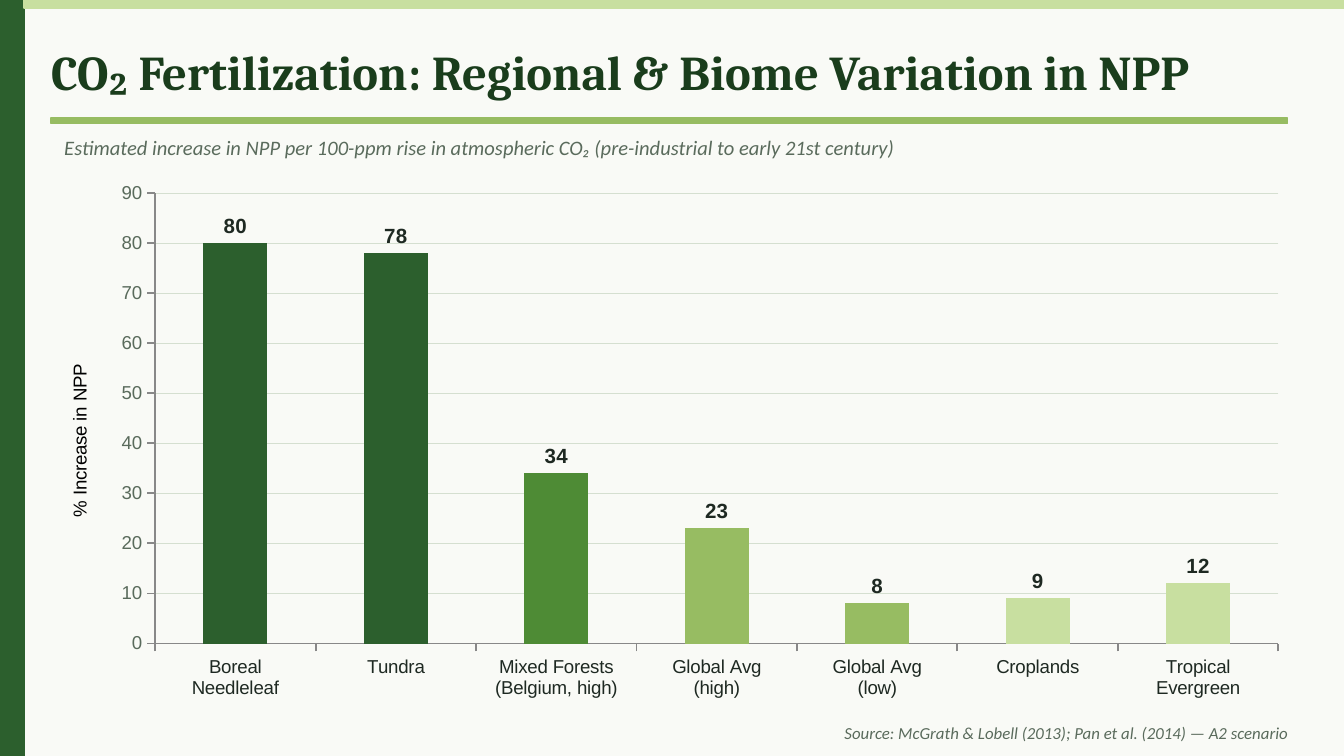
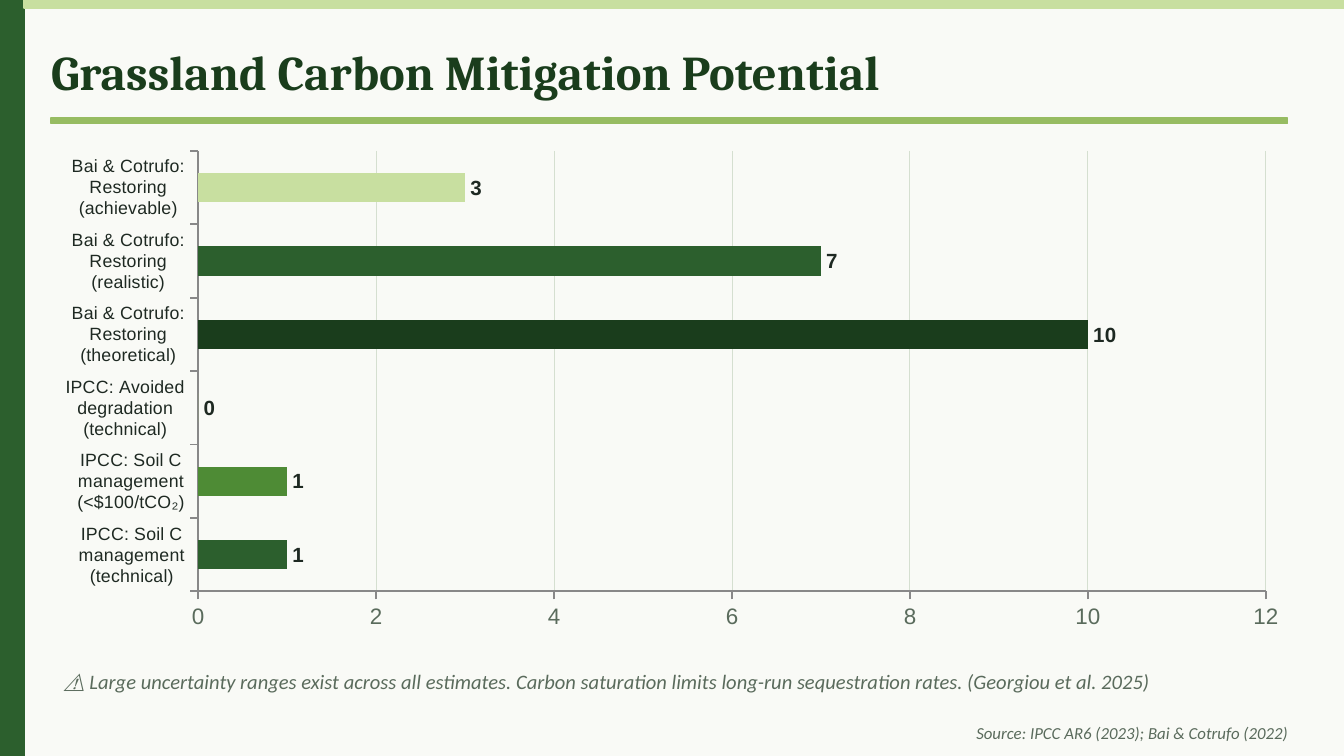
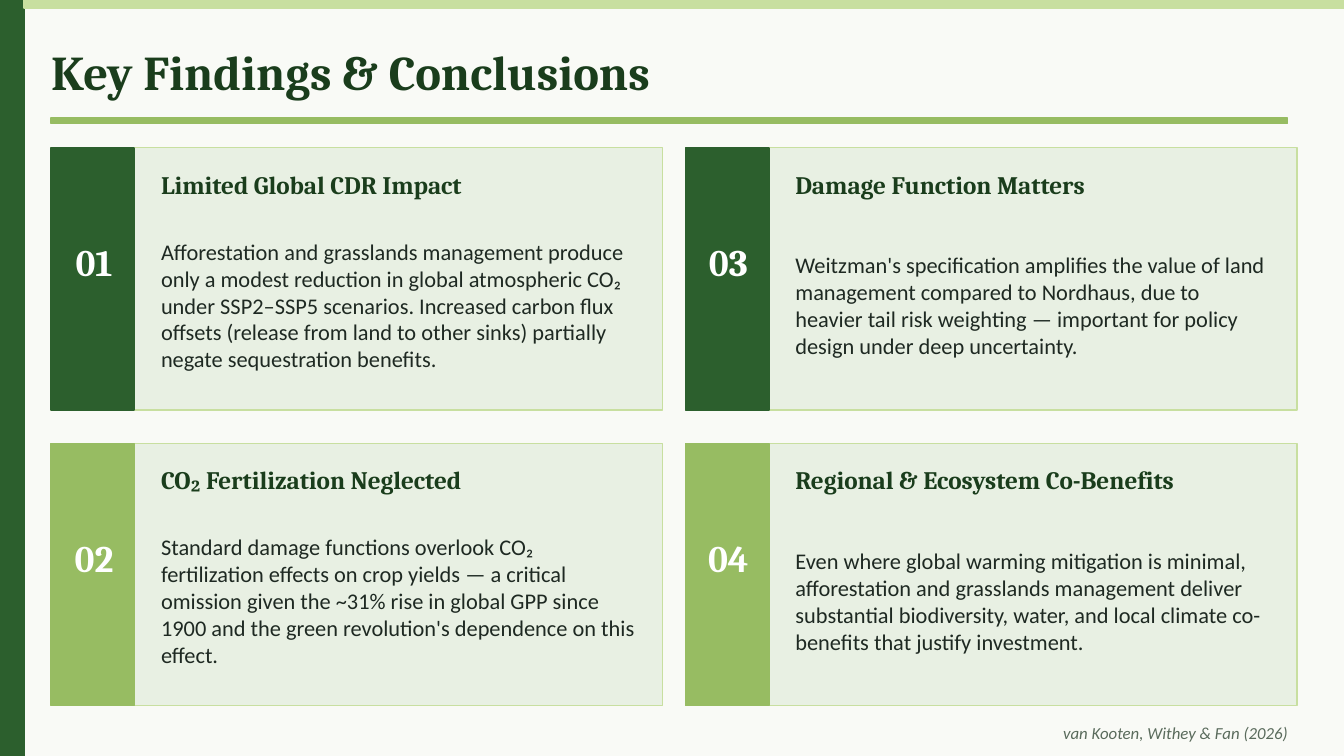
"""Build three slides on carbon sequestration findings: two bar charts and a grid of conclusions."""
from dataclasses import dataclass
from typing import Optional

from lxml import etree
from pptx import Presentation
from pptx import util as u
from pptx.chart.axis import CategoryAxis, ValueAxis
from pptx.chart.data import CategoryChartData
from pptx.dml.color import RGBColor
from pptx.enum import chart as charts, shapes, text
from pptx.oxml import parse_xml
from pptx.slide import Slide
from pptx.text.text import Font, TextFrame

FOREST = RGBColor(0x2C, 0x5F, 0x2D)
DEEP_GREEN = RGBColor(0x1A, 0x3D, 0x1C)
LEAF = RGBColor(0x4E, 0x8B, 0x35)
MOSS = RGBColor(0x97, 0xBC, 0x62)
PALE_GREEN = RGBColor(0xC8, 0xDF, 0xA0)
CARD_FILL = RGBColor(0xE8, 0xF0, 0xE3)
PAPER = RGBColor(0xF9, 0xFA, 0xF6)
INK = RGBColor(0x1E, 0x29, 0x22)
MUTED = RGBColor(0x5A, 0x6B, 0x5C)
AXIS_GREY = RGBColor(0x88, 0x88, 0x88)
GRID_GREEN = RGBColor(0xD5, 0xDF, 0xD0)
WHITE = RGBColor(0xFF, 0xFF, 0xFF)
BLACK = RGBColor(0x00, 0x00, 0x00)

SLIDE_WIDTH = u.Inches(10)
CELL = SLIDE_WIDTH / 100
COLUMNS, ROWS = 100, 56.25
LEFT_MARGIN, CONTENT_COLUMNS = 3.8, 92
SIDE_BAND, TOP_BAND = 1.8, 0.6

HEADING_FONT, BODY_FONT, CHART_FONT = "Cambria", "Calibri", "Arial"
DRAWING_NS = "http://schemas.openxmlformats.org/drawingml/2006/main"
CHART_NS = "http://schemas.openxmlformats.org/drawingml/2006/chart"


@dataclass(frozen=True)
class Area:
    """A rectangle measured in grid columns and rows."""
    column: float
    row: float
    columns: float
    rows: float

    def lengths(self) -> tuple[int, int, int, int]:
        """Return left, top, width and height as slide lengths."""
        return tuple(round(cells * CELL) for cells in (self.column, self.row, self.columns, self.rows))


@dataclass(frozen=True)
class TextStyle:
    """The look of one kind of text."""
    font: str
    size: float
    color: RGBColor
    bold: bool = False
    italic: bool = False
    align: text.PP_ALIGN = text.PP_ALIGN.LEFT


@dataclass(frozen=True)
class Bar:
    """One category of a bar chart."""
    label: str
    value: int
    color: RGBColor


@dataclass(frozen=True)
class BarChart:
    """The settings of one bar chart."""
    kind: charts.XL_CHART_TYPE
    area: Area
    bars: tuple[Bar, ...]
    maximum: int
    step: int
    category_size: float
    value_size: float
    value_title: Optional[str] = None


@dataclass(frozen=True)
class Finding:
    """One numbered conclusion."""
    heading: str
    body: str


TITLE = TextStyle(HEADING_FONT, 26, DEEP_GREEN, bold=True)
NOTE = TextStyle(BODY_FONT, 11, MUTED, italic=True)
SOURCE = TextStyle(BODY_FONT, 9, MUTED, italic=True, align=text.PP_ALIGN.RIGHT)
CARD_NUMBER = TextStyle(HEADING_FONT, 20, WHITE, bold=True, align=text.PP_ALIGN.CENTER)
CARD_HEADING = TextStyle(HEADING_FONT, 13.5, DEEP_GREEN, bold=True)
CARD_BODY = TextStyle(BODY_FONT, 12, INK)
BAR_LABEL = TextStyle(CHART_FONT, 11, INK, bold=True)
AXIS_TITLE = TextStyle(CHART_FONT, 10, BLACK)

NPP_CHART = BarChart(
    charts.XL_CHART_TYPE.COLUMN_CLUSTERED,
    Area(3, 12.8, 94, 40),
    (
        Bar("Boreal\nNeedleleaf", 80, FOREST),
        Bar("Tundra", 78, FOREST),
        Bar("Mixed Forests\n(Belgium, high)", 34, LEAF),
        Bar("Global Avg\n(high)", 23, MOSS),
        Bar("Global Avg\n(low)", 8, MOSS),
        Bar("Croplands", 9, PALE_GREEN),
        Bar("Tropical\nEvergreen", 12, PALE_GREEN),
    ),
    maximum=90, step=10, category_size=10, value_size=10, value_title="% Increase in NPP",
)

MITIGATION_CHART = BarChart(
    charts.XL_CHART_TYPE.BAR_CLUSTERED,
    Area(3, 10.5, 94, 37),
    (
        Bar("IPCC: Soil C\nmanagement\n(technical)", 1, FOREST),
        Bar("IPCC: Soil C\nmanagement\n(<$100/tCO₂)", 1, LEAF),
        Bar("IPCC: Avoided\ndegradation\n(technical)", 0, MOSS),
        Bar("Bai & Cotrufo:\nRestoring\n(theoretical)", 10, DEEP_GREEN),
        Bar("Bai & Cotrufo:\nRestoring\n(realistic)", 7, FOREST),
        Bar("Bai & Cotrufo:\nRestoring\n(achievable)", 3, PALE_GREEN),
    ),
    maximum=12, step=2, category_size=9.5, value_size=12,
)

FINDINGS = (
    Finding(
        "Limited Global CDR Impact",
        "Afforestation and grasslands management produce only a modest reduction in global "
        "atmospheric CO₂ under SSP2–SSP5 scenarios. Increased carbon flux offsets (release from "
        "land to other sinks) partially negate sequestration benefits.",
    ),
    Finding(
        "CO₂ Fertilization Neglected",
        "Standard damage functions overlook CO₂ fertilization effects on crop yields — a critical "
        "omission given the ~31% rise in global GPP since 1900 and the green revolution's "
        "dependence on this effect.",
    ),
    Finding(
        "Damage Function Matters",
        "Weitzman's specification amplifies the value of land management compared to Nordhaus, due "
        "to heavier tail risk weighting — important for policy design under deep uncertainty.",
    ),
    Finding(
        "Regional & Ecosystem Co-Benefits",
        "Even where global warming mitigation is minimal, afforestation and grasslands management "
        "deliver substantial biodiversity, water, and local climate co-benefits that justify "
        "investment.",
    ),
)


def style_font(font: Font, style: TextStyle) -> None:
    """Apply a text style to a font."""
    font.name = style.font
    font.size = u.Pt(style.size)
    font.bold = style.bold
    font.italic = style.italic
    font.color.rgb = style.color


def write(frame: TextFrame, words: str, style: TextStyle) -> None:
    """Write one styled paragraph, centred vertically, into a text frame."""
    frame.word_wrap = True
    frame.auto_size = text.MSO_AUTO_SIZE.NONE
    frame.vertical_anchor = text.MSO_ANCHOR.MIDDLE
    paragraph = frame.paragraphs[0]
    paragraph.alignment = style.align
    run = paragraph.add_run()
    run.text = words
    style_font(run.font, style)


def add_text(slide: Slide, area: Area, words: str, style: TextStyle) -> None:
    """Add a text box."""
    write(slide.shapes.add_textbox(*area.lengths()).text_frame, words, style)


def add_block(slide: Slide, area: Area, fill: RGBColor, line: Optional[RGBColor] = None,
              line_width: float = 1) -> None:
    """Add a flat rectangle, outlined in its own colour unless another is given."""
    shape = slide.shapes.add_shape(shapes.MSO_SHAPE.RECTANGLE, *area.lengths())
    shape.shadow.inherit = False
    shape.fill.solid()
    shape.fill.fore_color.rgb = fill
    shape.line.color.rgb = line or fill
    shape.line.width = u.Pt(line_width)


def add_titled_slide(presentation: Presentation, title: str, source: str) -> Slide:
    """Add a slide with the shared bands, title, rule and source line."""
    slide = presentation.slides.add_slide(presentation.slide_layouts[5])
    slide.background.fill.solid()
    slide.background.fill.fore_color.rgb = PAPER
    add_block(slide, Area(0, 0, SIDE_BAND, ROWS), FOREST)
    add_block(slide, Area(SIDE_BAND, 0, COLUMNS - SIDE_BAND, TOP_BAND), PALE_GREEN)
    placeholder = slide.shapes.title
    title_area = Area(LEFT_MARGIN, 1.8, CONTENT_COLUMNS, 7)
    placeholder.left, placeholder.top, placeholder.width, placeholder.height = title_area.lengths()
    frame = placeholder.text_frame
    frame.margin_left = frame.margin_right = frame.margin_top = frame.margin_bottom = 0
    write(frame, title, TITLE)
    add_block(slide, Area(LEFT_MARGIN, 8.8, CONTENT_COLUMNS, 0.4), MOSS)
    add_text(slide, Area(LEFT_MARGIN, 53.5, CONTENT_COLUMNS + 1, 2), source, SOURCE)
    return slide


def style_axis(axis: CategoryAxis | ValueAxis, size: float, color: RGBColor) -> None:
    """Format the line, ticks and labels of an axis."""
    axis.format.line.color.rgb = AXIS_GREY
    axis.format.line.width = u.Pt(1)
    axis.major_tick_mark = charts.XL_TICK_MARK.OUTSIDE
    axis.minor_tick_mark = charts.XL_TICK_MARK.NONE
    axis.tick_label_position = charts.XL_TICK_LABEL_POSITION.LOW
    style_font(axis.tick_labels.font, TextStyle(CHART_FONT, size, color))


def add_bar_chart(slide: Slide, settings: BarChart) -> None:
    """Add a one-series bar chart with individually coloured bars."""
    data = CategoryChartData(number_format="#,##0")
    data.categories = [bar.label for bar in settings.bars]
    data.add_series("Series 1", [bar.value for bar in settings.bars])
    chart = slide.shapes.add_chart(settings.kind, *settings.area.lengths(), data).chart
    chart.has_legend = False
    chart.has_title = False
    style_font(chart.font, TextStyle(BODY_FONT, 10, BLACK))

    style_axis(chart.category_axis, settings.category_size, INK)
    chart.category_axis.has_major_gridlines = False
    value_axis = chart.value_axis
    style_axis(value_axis, settings.value_size, MUTED)
    value_axis.minimum_scale, value_axis.maximum_scale = 0, settings.maximum
    value_axis.major_unit = settings.step
    value_axis.tick_labels.number_format = "General"
    value_axis.tick_labels.number_format_is_linked = False
    value_axis.has_major_gridlines = True
    value_axis.major_gridlines.format.line.color.rgb = GRID_GREEN
    value_axis.major_gridlines.format.line.width = u.Pt(0.5)
    value_axis.has_title = settings.value_title is not None
    if settings.value_title:
        run = value_axis.axis_title.text_frame.paragraphs[0].add_run()
        run.text = settings.value_title
        style_font(run.font, AXIS_TITLE)

    plot = chart.plots[0]
    plot.vary_by_categories = False
    plot.gap_width = 150
    series = plot.series[0]
    series.invert_if_negative = False
    series.format.fill.solid()
    series.format.fill.fore_color.rgb = FOREST
    for index, bar in enumerate(settings.bars):
        if bar.color != FOREST:
            fill = series.points[index].format.fill
            fill.solid()
            fill.fore_color.rgb = bar.color
    labels = series.data_labels
    labels.show_value = True
    labels.number_format = "#,##0"
    labels.number_format_is_linked = False
    labels.position = charts.XL_LABEL_POSITION.OUTSIDE_END
    style_font(labels.font, BAR_LABEL)

    plot_area = chart.element.find(f".//{{{CHART_NS}}}plotArea")
    properties = parse_xml(f'<c:spPr xmlns:c="{CHART_NS}" xmlns:a="{DRAWING_NS}"><a:solidFill/></c:spPr>')
    etree.SubElement(properties[0], f"{{{DRAWING_NS}}}srgbClr", val=str(PAPER))
    plot_area.append(properties)


def add_finding(slide: Slide, index: int, finding: Finding) -> None:
    """Add one numbered card, filling the two-by-two grid column by column."""
    grid_column, grid_row = divmod(index, 2)
    left = LEFT_MARGIN + grid_column * 47.2
    top = 11 + grid_row * 22
    add_block(slide, Area(left, top, 45.5, 19.5), CARD_FILL, PALE_GREEN, 0.7)
    add_block(slide, Area(left, top, 6.2, 19.5), MOSS if grid_row else FOREST)
    add_text(slide, Area(left + 0.2, top + 5.5, 6, 6), f"{index + 1:02}", CARD_NUMBER)
    add_text(slide, Area(left + 7.2, top + 0.8, 37.3, 3.8), finding.heading, CARD_HEADING)
    add_text(slide, Area(left + 7.2, top + 4.6, 37.3, 14.2), finding.body, CARD_BODY)


def main() -> None:
    """Build and save the presentation."""
    presentation = Presentation()
    presentation.slide_width = SLIDE_WIDTH
    presentation.slide_height = round(ROWS * CELL)

    slide = add_titled_slide(
        presentation, "CO₂ Fertilization: Regional & Biome Variation in NPP",
        "Source: McGrath & Lobell (2013); Pan et al. (2014) — A2 scenario")
    add_text(slide, Area(LEFT_MARGIN, 9.5, CONTENT_COLUMNS, 3),
             "Estimated increase in NPP per 100-ppm rise in atmospheric CO₂ "
             "(pre-industrial to early 21st century)", NOTE)
    add_bar_chart(slide, NPP_CHART)

    slide = add_titled_slide(
        presentation, "Grassland Carbon Mitigation Potential",
        "Source: IPCC AR6 (2023); Bai & Cotrufo (2022)")
    add_bar_chart(slide, MITIGATION_CHART)
    add_text(slide, Area(LEFT_MARGIN, 48.2, CONTENT_COLUMNS, 5),
             "⚠ Large uncertainty ranges exist across all estimates. Carbon saturation limits "
             "long-run sequestration rates. (Georgiou et al. 2025)", NOTE)

    slide = add_titled_slide(
        presentation, "Key Findings & Conclusions", "van Kooten, Withey & Fan (2026)")
    for index, finding in enumerate(FINDINGS):
        add_finding(slide, index, finding)

    presentation.save("out.pptx")


if __name__ == "__main__":
    main()
